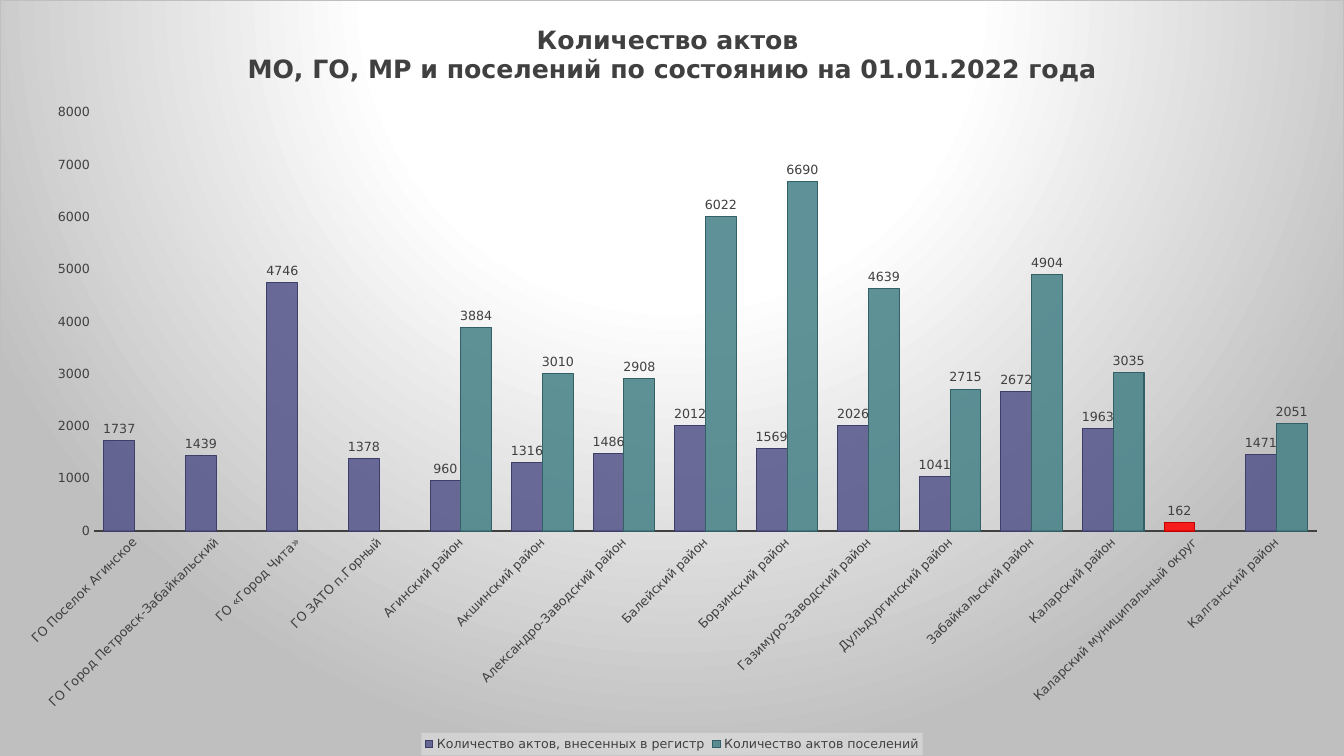
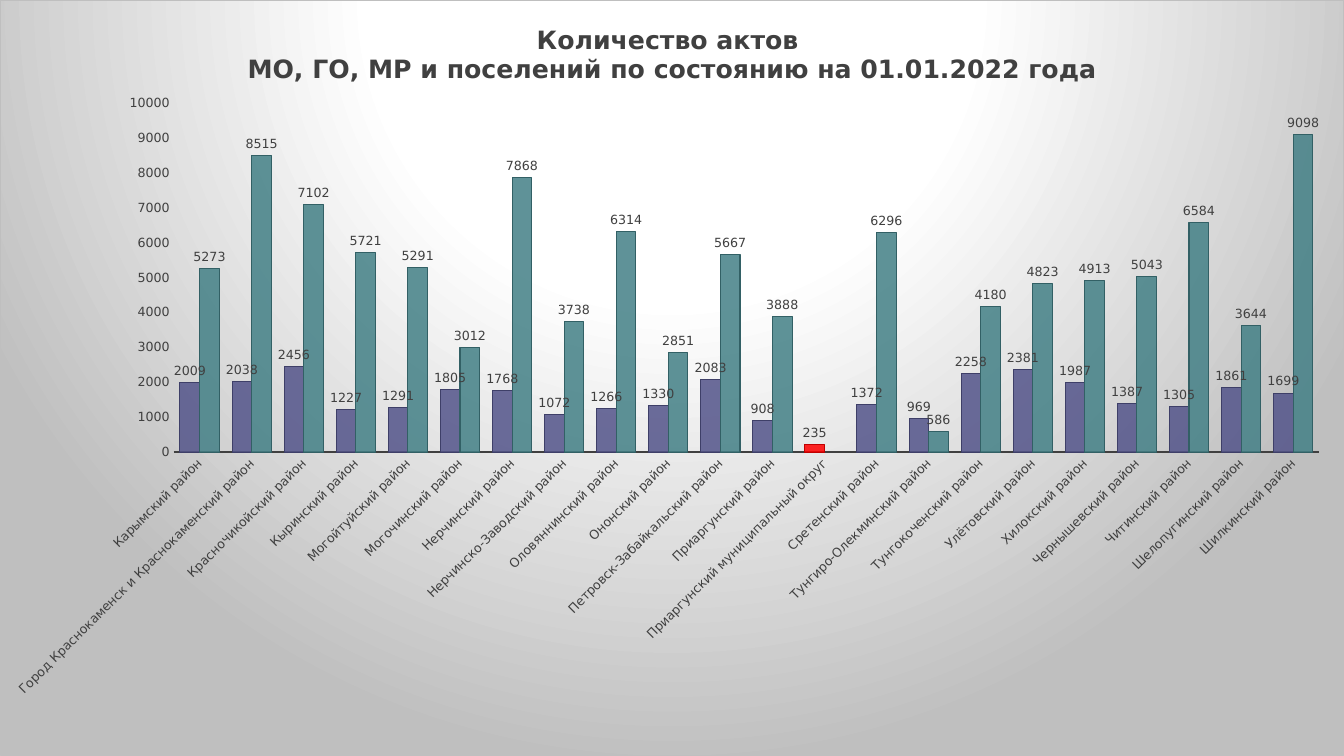
from dataclasses import dataclass
from typing import NamedTuple, Optional

from lxml import etree
from pptx import Presentation
from pptx.chart.data import CategoryChartData
from pptx.chart.chart import Chart
from pptx.dml.color import RGBColor
from pptx.enum.chart import (XL_CHART_TYPE, XL_LABEL_POSITION,
                             XL_LEGEND_POSITION, XL_TICK_MARK)
from pptx.oxml import parse_xml
from pptx.oxml.ns import nsdecls, qn
from pptx.slide import Slide
from pptx.util import Emu, Pt

COLUMNS = XL_CHART_TYPE.COLUMN_CLUSTERED
OUTSIDE = XL_LABEL_POSITION.OUTSIDE_END
BOTTOM = XL_LEGEND_POSITION.BOTTOM
NO_TICK = XL_TICK_MARK.NONE

# Scale: 96 px to the inch
PX = 9525
WIDTH, HEIGHT = 1280, 720

# Shared style
FONT = "DejaVu Sans"
TEXT = RGBColor(0x40, 0x40, 0x40)
BACKDROP = RGBColor(0xDE, 0xDE, 0xDE)
WHITE = RGBColor(0xFF, 0xFF, 0xFF)
EDGE = RGBColor(0xBF, 0xBF, 0xBF)
LEGEND_FILL = RGBColor(0xF2, 0xF2, 0xF2)
RED = RGBColor(0xFF, 0x00, 0x00)
DARK_RED = RGBColor(0xC0, 0x00, 0x00)
BAR_OPACITY = 85
LEGEND_OPACITY = 39
SMALL_TEXT = {"name": FONT, "size": Pt(9), "bold": False}
TITLE_TEXT = {"name": FONT, "size": Pt(18), "bold": True}
TITLE_LINES = ("Количество актов ",
               "МО, ГО, МР и поселений по состоянию на 01.01.2022 года")


class SeriesStyle(NamedTuple):
    name: str
    fill: RGBColor
    line: RGBColor


SERIES = (
    SeriesStyle("Количество актов, внесенных в регистр",
                RGBColor(0x53, 0x54, 0x8A), RGBColor(0x3E, 0x3F, 0x68)),
    SeriesStyle("Количество актов поселений",
                RGBColor(0x43, 0x80, 0x86), RGBColor(0x32, 0x60, 0x65)),
)


class District(NamedTuple):
    name: str
    registered: int
    settlements: Optional[int] = None


class PlotBox(NamedTuple):
    left: int
    top: int
    width: int
    height: int


@dataclass(frozen=True)
class ActsChart:
    districts: tuple[District, ...]
    highlighted: str
    scale_max: int
    plot: PlotBox
    has_legend: bool


# Content
CHARTS = (
    ActsChart(
        districts=(
            District("ГО Поселок Агинское", 1737),
            District("ГО Город Петровск-Забайкальский", 1439),
            District("ГО «Город Чита»", 4746),
            District("ГО ЗАТО п.Горный", 1378),
            District("Агинский район", 960, 3884),
            District("Акшинский район", 1316, 3010),
            District("Александро-Заводский район", 1486, 2908),
            District("Балейский район", 2012, 6022),
            District("Борзинский район", 1569, 6690),
            District("Газимуро-Заводский район", 2026, 4639),
            District("Дульдургинский район", 1041, 2715),
            District("Забайкальский район", 2672, 4904),
            District("Каларский район", 1963, 3035),
            District("Каларский муниципальный округ", 162),
            District("Калганский район", 1471, 2051),
        ),
        highlighted="Каларский муниципальный округ",
        scale_max=8000,
        plot=PlotBox(89, 107, 1166, 399),
        has_legend=True,
    ),
    ActsChart(
        districts=(
            District("Карымский район", 2009, 5273),
            District("Город Краснокаменск и Краснокаменский район", 2038, 8515),
            District("Красночикойский район", 2456, 7102),
            District("Кыринский район", 1227, 5721),
            District("Могойтуйский район", 1291, 5291),
            District("Могочинский район", 1805, 3012),
            District("Нерчинский район", 1768, 7868),
            District("Нерчинско-Заводский район", 1072, 3738),
            District("Оловяннинский район", 1266, 6314),
            District("Ононский район", 1330, 2851),
            District("Петровск-Забайкальский район", 2083, 5667),
            District("Приаргунский район", 908, 3888),
            District("Приаргунский муниципальный округ", 235),
            District("Сретенский район", 1372, 6296),
            District("Тунгиро-Олекминский район", 969, 586),
            District("Тунгокоченский район", 2258, 4180),
            District("Улётовский район", 2381, 4823),
            District("Хилокский район", 1987, 4913),
            District("Чернышевский район", 1387, 5043),
            District("Читинский район", 1305, 6584),
            District("Шелопугинский район", 1861, 3644),
            District("Шилкинский район", 1699, 9098),
        ),
        highlighted="Приаргунский муниципальный округ",
        scale_max=10000,
        plot=PlotBox(165, 98, 1092, 333),
        has_legend=False,
    ),
)


def px(length: int) -> Emu:
    return Emu(length * PX)


def style_font(font, values: dict) -> None:
    for attribute, value in values.items():
        setattr(font, attribute, value)
    font.color.rgb = TEXT


def paint(target, fill: RGBColor, line: RGBColor) -> None:
    target.format.fill.solid()
    target.format.fill.fore_color.rgb = fill
    target.format.line.color.rgb = line
    target.format.line.width = Pt(0.75)


def add_backdrop(chart: Chart) -> None:
    """Radial gradient and thin border of the chart area."""
    stops = "".join(
        f'<a:gs pos="{percent * 1000}"><a:srgbClr val="{color}"/></a:gs>'
        for percent, color in ((0, WHITE), (39, WHITE), (100, EDGE)))
    chart.element.find(qn("c:chart")).addnext(parse_xml(
        f'<c:spPr {nsdecls("c", "a")}><a:gradFill><a:gsLst>{stops}</a:gsLst>'
        '<a:path path="circle"><a:fillToRect l="50000" t="-80000" r="50000" '
        'b="180000"/></a:path></a:gradFill>'
        f'<a:ln w="{Pt(0.75)}"><a:solidFill><a:srgbClr val="{EDGE}"/>'
        '</a:solidFill></a:ln></c:spPr>'))


def place_plot(chart: Chart, box: PlotBox) -> None:
    area = chart.element.find(qn("c:chart")).find(qn("c:plotArea"))
    for layout in area.findall(qn("c:layout")):
        area.remove(layout)
    fractions = {"x": box.left / WIDTH, "y": box.top / HEIGHT,
                 "w": box.width / WIDTH, "h": box.height / HEIGHT}
    values = "".join(f'<c:{key} val="{value:.4f}"/>'
                     for key, value in fractions.items())
    area.insert(0, parse_xml(
        f'<c:layout {nsdecls("c")}><c:manualLayout>'
        '<c:layoutTarget val="inner"/><c:xMode val="edge"/>'
        f'<c:yMode val="edge"/>{values}</c:manualLayout></c:layout>'))


def add_title(chart: Chart) -> None:
    chart.has_title = True
    frame = chart.chart_title.text_frame
    for index, line in enumerate(TITLE_LINES):
        paragraph = frame.add_paragraph() if index else frame.paragraphs[0]
        run = paragraph.add_run()
        run.text = line
        style_font(run.font, TITLE_TEXT)


def add_legend(chart: Chart) -> None:
    chart.has_legend = True
    legend = chart.legend
    legend.position = BOTTOM
    legend.include_in_layout = False
    style_font(legend.font, SMALL_TEXT)
    chart.element.xpath(".//c:legend/c:overlay")[0].addnext(parse_xml(
        f'<c:spPr {nsdecls("c", "a")}><a:solidFill>'
        f'<a:srgbClr val="{LEGEND_FILL}"><a:alpha val="{LEGEND_OPACITY * 1000}"/>'
        '</a:srgbClr></a:solidFill></c:spPr>'))


def style_axes(chart: Chart, scale_max: int) -> None:
    districts, counts = chart.category_axis, chart.value_axis
    for axis in (districts, counts):
        axis.major_tick_mark = axis.minor_tick_mark = NO_TICK
        axis.has_major_gridlines = False
        style_font(axis.tick_labels.font, SMALL_TEXT)
    districts.format.line.color.rgb = TEXT
    districts.format.line.width = Pt(1.5)
    # Category names slope upwards at 45 degrees
    districts._element.find(qn("c:txPr")).find(qn("a:bodyPr")).set("rot", "-2700000")
    counts.format.line.fill.background()
    counts.minimum_scale, counts.maximum_scale = 0, scale_max
    counts.major_unit = 1000


def style_bars(chart: Chart, highlighted: int) -> None:
    plot = chart.plots[0]
    plot.gap_width, plot.overlap = 65, 0
    plot.vary_by_categories = False
    for series, style in zip(plot.series, SERIES):
        series.invert_if_negative = False
        paint(series, style.fill, style.line)
        labels = series.data_labels
        labels.show_value = True
        labels.position = OUTSIDE
        style_font(labels.font, SMALL_TEXT)
    paint(plot.series[0].points[highlighted], RED, DARK_RED)
    for color in chart.element.xpath(".//c:ser//c:spPr/a:solidFill/a:srgbClr"):
        etree.SubElement(color, qn("a:alpha"), val=str(BAR_OPACITY * 1000))


def add_acts_chart(slide: Slide, acts: ActsChart) -> None:
    names = [district.name for district in acts.districts]
    data = CategoryChartData(number_format="General")
    data.categories = names
    counts = ([district.registered for district in acts.districts],
              [district.settlements for district in acts.districts])
    for style, values in zip(SERIES, counts):
        data.add_series(style.name, values)
    chart = slide.shapes.add_chart(
        COLUMNS, 0, 0, px(WIDTH), px(HEIGHT), data).chart
    chart.font.name, chart.font.size = FONT, Pt(10)
    add_backdrop(chart)
    add_title(chart)
    chart.has_legend = False
    if acts.has_legend:
        add_legend(chart)
    style_axes(chart, acts.scale_max)
    style_bars(chart, names.index(acts.highlighted))
    place_plot(chart, acts.plot)


def main() -> None:
    deck = Presentation()
    deck.slide_width, deck.slide_height = px(WIDTH), px(HEIGHT)
    backdrop = deck.slide_master.background.fill
    backdrop.solid()
    backdrop.fore_color.rgb = BACKDROP
    blank = deck.slide_layouts.get_by_name("Blank")
    for acts in CHARTS:
        add_acts_chart(deck.slides.add_slide(blank), acts)
    deck.save("out.pptx")


if __name__ == "__main__":
    main()
